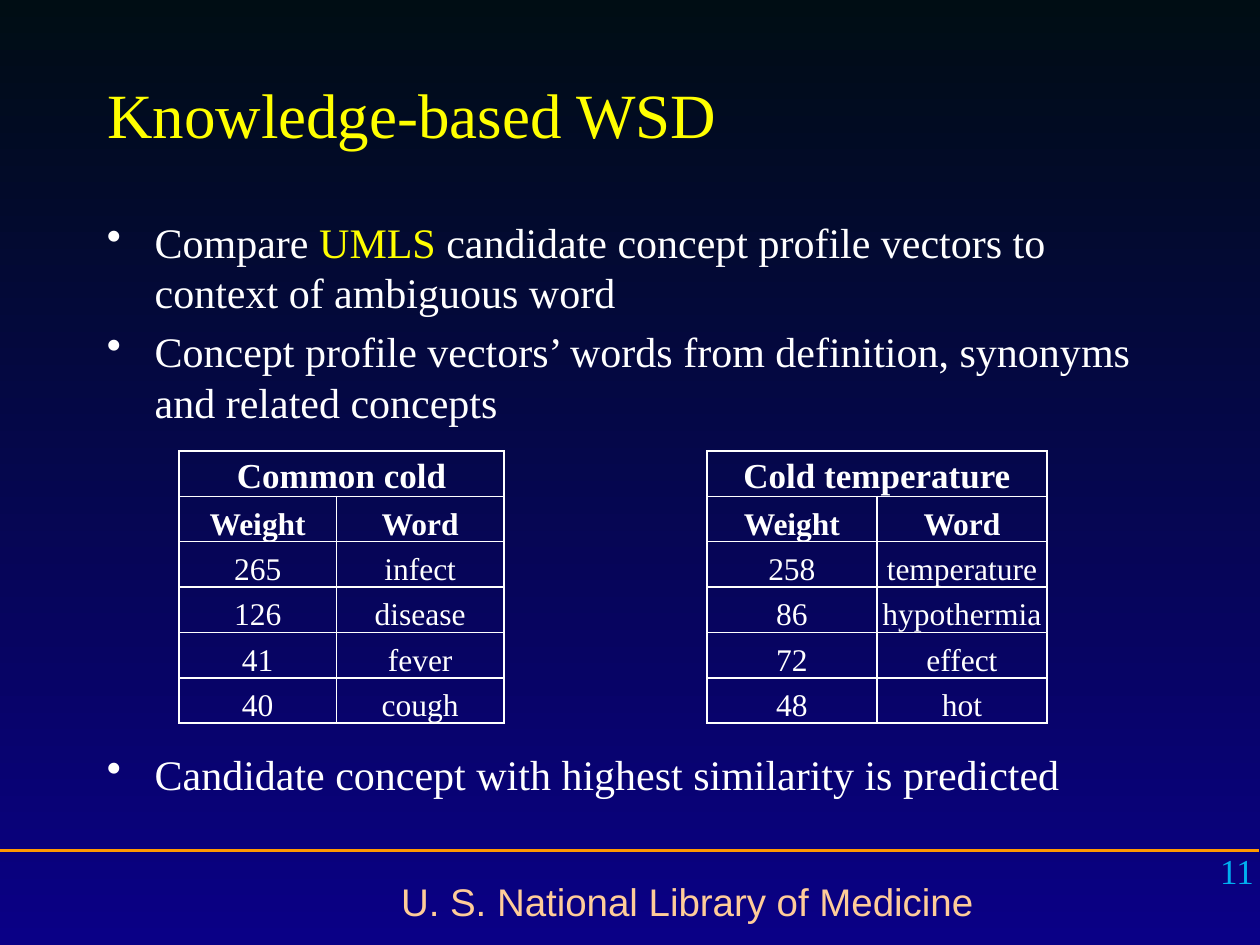
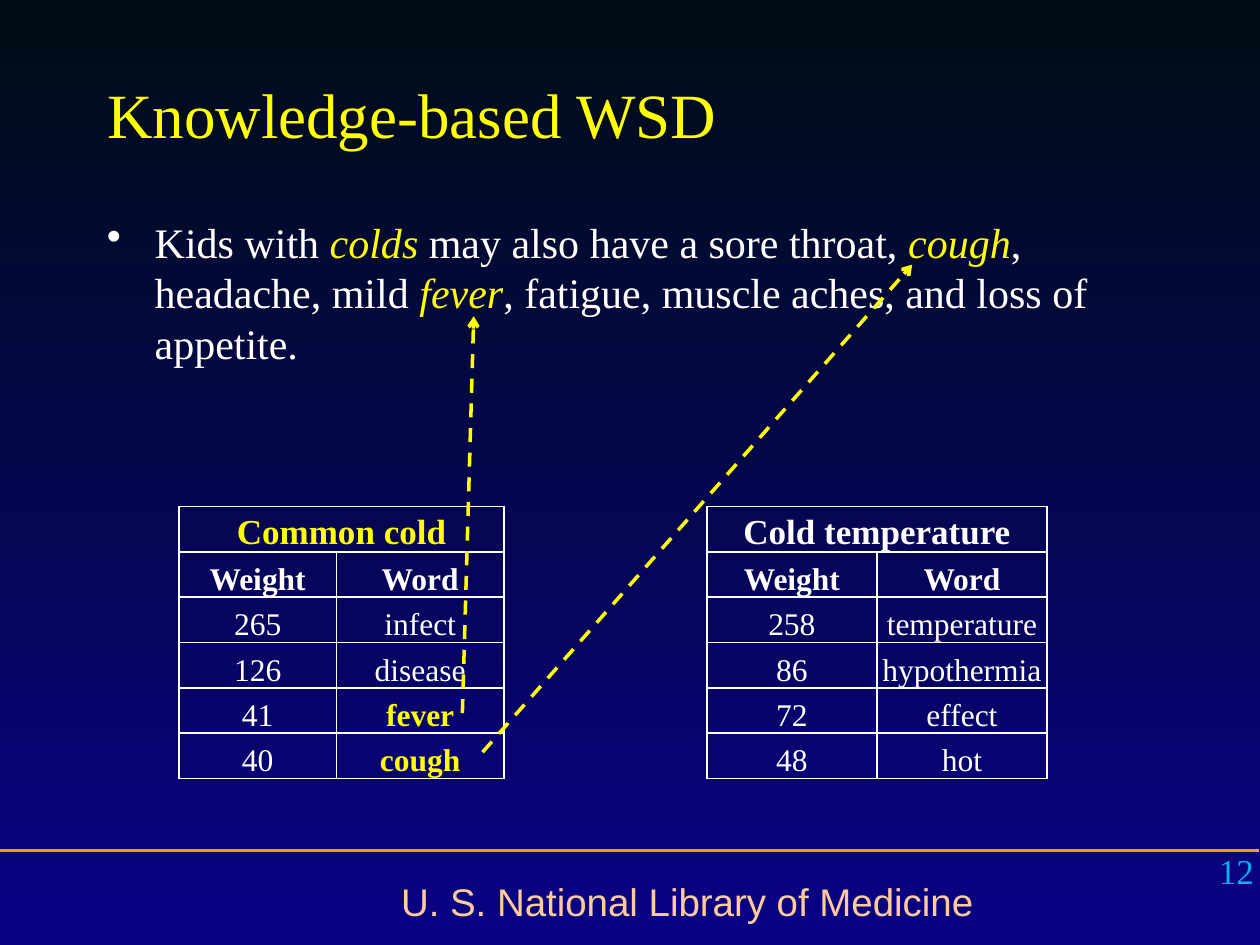
"""Build two slides on knowledge-based word sense disambiguation."""
from dataclasses import dataclass

from lxml.etree import SubElement
from pptx import Presentation
from pptx.dml.color import RGBColor
from pptx.enum.dml import MSO_LINE
from pptx.enum.shapes import MSO_CONNECTOR
from pptx.enum.text import MSO_ANCHOR, PP_ALIGN
from pptx.oxml.ns import qn
from pptx.util import Inches, Pt


@dataclass(frozen=True)
class Theme:
    top: str = "000D14"
    bottom: str = "0A0086"
    text: str = "FFFFFF"
    accent: str = "FFFF00"
    rule: str = "FF9900"
    footer: str = "FFCC99"
    number: str = "00B0F0"
    serif: str = "Times New Roman"
    sans: str = "Arial"
    title_size: int = 36
    body_size: int = 24
    footer_size: int = 22
    heading_size: int = 20
    cell_size: int = 18


@dataclass(frozen=True)
class Span:
    text: str
    marked: bool = False
    italic: bool = False


@dataclass(frozen=True)
class Bullet:
    spans: tuple[Span, ...]
    before: float = 4.8


@dataclass(frozen=True)
class Profile:
    concept: str
    weights: tuple[tuple[int, str], ...]


@dataclass(frozen=True)
class Arrow:
    start: tuple[float, float]
    end: tuple[float, float]


@dataclass(frozen=True)
class Page:
    number: int
    bullets: tuple[Bullet, ...]
    table_top: float
    matches: tuple[str, ...] = ()
    arrows: tuple[Arrow, ...] = ()


THEME = Theme()
TITLE = "Knowledge-based WSD"
FOOTER = "U. S. National Library of Medicine"
COLUMN_WIDTHS = (1.25, 1.33, 1.61, 1.35, 1.35)
ROW_HEIGHT = 0.36
GAP_COLUMN = 2
PROFILES = {
    0: Profile("Common cold", ((265, "infect"), (126, "disease"), (41, "fever"), (40, "cough"))),
    3: Profile("Cold temperature",
               ((258, "temperature"), (86, "hypothermia"), (72, "effect"), (48, "hot"))),
}
PAGES = (
    Page(11, (
        Bullet((Span("Compare "), Span("UMLS", marked=True),
                Span(" candidate concept profile vectors to context of ambiguous word")), 0),
        Bullet((Span("Concept profile vectors’ words from definition, synonyms "
                     "and related concepts"),)),
        Bullet((Span("Candidate concept with highest similarity is predicted"),), 184),
    ), 3.58),
    Page(12, (
        Bullet((Span("Kids with "), Span("colds", True, True),
                Span(" may also have a sore throat, "), Span("cough", True, True),
                Span(", headache, mild "), Span("fever", True, True),
                Span(", fatigue, muscle aches, and loss of appetite.")), 0),
    ), 4.02, ("Common cold", "fever", "cough"),
        (Arrow((3.83, 5.97), (7.24, 2.1)), Arrow((3.67, 5.66), (3.76, 2.51)))),
)


def set_font(font, size: int, color: str, name: str = THEME.serif, bold: bool = False) -> None:
    """Apply one type style."""
    font.name, font.size, font.bold = name, Pt(size), bold
    font.color.rgb = RGBColor.from_string(color)


def add_line(slide, start: tuple[float, float], end: tuple[float, float], color: str, width: float):
    """Draw a straight line without a shadow."""
    ends = [Inches(value) for value in (*start, *end)]
    connector = slide.shapes.add_connector(MSO_CONNECTOR.STRAIGHT, *ends)
    connector.line.color.rgb = RGBColor.from_string(color)
    connector.line.width = Pt(width)
    SubElement(connector._element.spPr, qn("a:effectLst"))
    return connector


def add_arrow(slide, arrow: Arrow) -> None:
    """Draw a dashed arrow from a profile word to its match in the sentence."""
    connector = add_line(slide, arrow.start, arrow.end, THEME.accent, 2)
    connector.line.dash_style = MSO_LINE.DASH
    SubElement(connector.line._get_or_add_ln(), qn("a:tailEnd"), type="arrow")


def add_frame(slide, left: float, top: float, width: float, height: float):
    """Add a wrapping text box and return its text frame."""
    box = slide.shapes.add_textbox(Inches(left), Inches(top), Inches(width), Inches(height))
    box.text_frame.word_wrap = True
    return box.text_frame


def add_label(slide, bounds: tuple[float, float, float, float], text: str, align: PP_ALIGN,
              size: int, color: str, name: str) -> None:
    """Add a one-line label."""
    paragraph = add_frame(slide, *bounds).paragraphs[0]
    paragraph.text, paragraph.alignment = text, align
    set_font(paragraph.font, size, color, name)


def add_bullets(slide, bullets: tuple[Bullet, ...]) -> None:
    """Fill the body with bulleted paragraphs and marked words."""
    frame = add_frame(slide, 0.75, 1.67, 8.5, 5)
    for index, bullet in enumerate(bullets):
        paragraph = frame.add_paragraph() if index else frame.paragraphs[0]
        properties = paragraph._p.get_or_add_pPr()
        properties.set("marL", str(Inches(0.38)))
        properties.set("indent", str(-Inches(0.38)))
        bullet_color = SubElement(properties, qn("a:buClr"))
        SubElement(bullet_color, qn("a:srgbClr"), val=THEME.text)
        SubElement(properties, qn("a:buChar"), char="•")
        paragraph.space_before = Pt(bullet.before)
        set_font(paragraph.font, THEME.body_size, THEME.text)
        for span in bullet.spans:
            run = paragraph.add_run()
            run.text = span.text
            if span.marked:
                run.font.color.rgb = RGBColor.from_string(THEME.accent)
            if span.italic:
                run.font.italic = True


def style_cell(cell, is_gap: bool) -> None:
    """Give a cell its borders, clear fill, margins and anchor."""
    properties = cell._tc.get_or_add_tcPr()
    for side in "LRTB":
        border = SubElement(properties, qn(f"a:ln{side}"), w=str(Pt(1)))
        if is_gap and side in "TB":
            SubElement(border, qn("a:noFill"))
        else:
            fill = SubElement(border, qn("a:solidFill"))
            SubElement(fill, qn("a:srgbClr"), val=THEME.text)
    cell.fill.background()
    cell.margin_left = cell.margin_right = cell.margin_top = Inches(0.01)
    cell.margin_bottom = 0
    cell.vertical_anchor = MSO_ANCHOR.BOTTOM


def write_cell(cell, text: str, size: int, bold: bool, marked: bool) -> None:
    """Write centred text, highlighted where it matches the context."""
    paragraph = cell.text_frame.paragraphs[0]
    paragraph.text, paragraph.alignment = text, PP_ALIGN.CENTER
    set_font(paragraph.font, size, THEME.accent if marked else THEME.text, bold=bold or marked)


def add_profiles(slide, top: float, matches: tuple[str, ...]) -> None:
    """Add the two concept profiles as one table with an open gap column."""
    row_count = 2 + len(PROFILES[0].weights)
    table = slide.shapes.add_table(
        row_count, len(COLUMN_WIDTHS), Inches(1.42), Inches(top),
        Inches(sum(COLUMN_WIDTHS)), Inches(ROW_HEIGHT * row_count)).table
    table.first_row = table.horz_banding = False
    for column, width in zip(table.columns, COLUMN_WIDTHS):
        column.width = Inches(width)
    for row in table.rows:
        row.height = Inches(ROW_HEIGHT)
        for index, cell in enumerate(row.cells):
            style_cell(cell, index == GAP_COLUMN)
    table.cell(0, GAP_COLUMN).merge(table.cell(row_count - 1, GAP_COLUMN))
    for first, profile in PROFILES.items():
        heading = table.cell(0, first)
        heading.merge(table.cell(0, first + 1))
        write_cell(heading, profile.concept, THEME.heading_size, True, profile.concept in matches)
        for row_index, pair in enumerate((("Weight", "Word"), *profile.weights), start=1):
            for offset, value in enumerate(pair):
                write_cell(table.cell(row_index, first + offset), str(value), THEME.cell_size,
                           row_index == 1, value in matches)


def add_title(slide) -> None:
    """Place and format the title placeholder."""
    title = slide.shapes.title
    title.left, title.top, title.width, title.height = map(Inches, (0.75, 0.5, 8.5, 0.75))
    title.text_frame.vertical_anchor = MSO_ANCHOR.BOTTOM
    paragraph = title.text_frame.paragraphs[0]
    paragraph.text, paragraph.alignment = TITLE, PP_ALIGN.LEFT
    set_font(paragraph.font, THEME.title_size, THEME.accent)


def add_page(deck, page: Page) -> None:
    """Build one slide."""
    slide = deck.slides.add_slide(deck.slide_layouts.get_by_name("Title Only"))
    add_line(slide, (-0.01, 6.75), (9.99, 6.75), THEME.rule, 1.5)
    add_label(slide, (2.32, 6.92, 6.27, 0.47), FOOTER, PP_ALIGN.CENTER,
              THEME.footer_size, THEME.footer, THEME.sans)
    add_title(slide)
    add_bullets(slide, page.bullets)
    add_profiles(slide, page.table_top, page.matches)
    for arrow in page.arrows:
        add_arrow(slide, arrow)
    add_label(slide, (7.72, 6.69, 2.33, 0.52), str(page.number), PP_ALIGN.RIGHT,
              THEME.heading_size, THEME.number, THEME.serif)


def main() -> None:
    """Create the deck and save it."""
    deck = Presentation()
    deck.slide_width, deck.slide_height = Inches(10), Inches(7.5)
    background = deck.slide_master.background.fill
    background.gradient()
    background.gradient_angle = 270
    for stop, color in zip(background.gradient_stops, (THEME.top, THEME.bottom)):
        stop.color.rgb = RGBColor.from_string(color)
    for page in PAGES:
        add_page(deck, page)
    deck.save("out.pptx")


if __name__ == "__main__":
    main()
